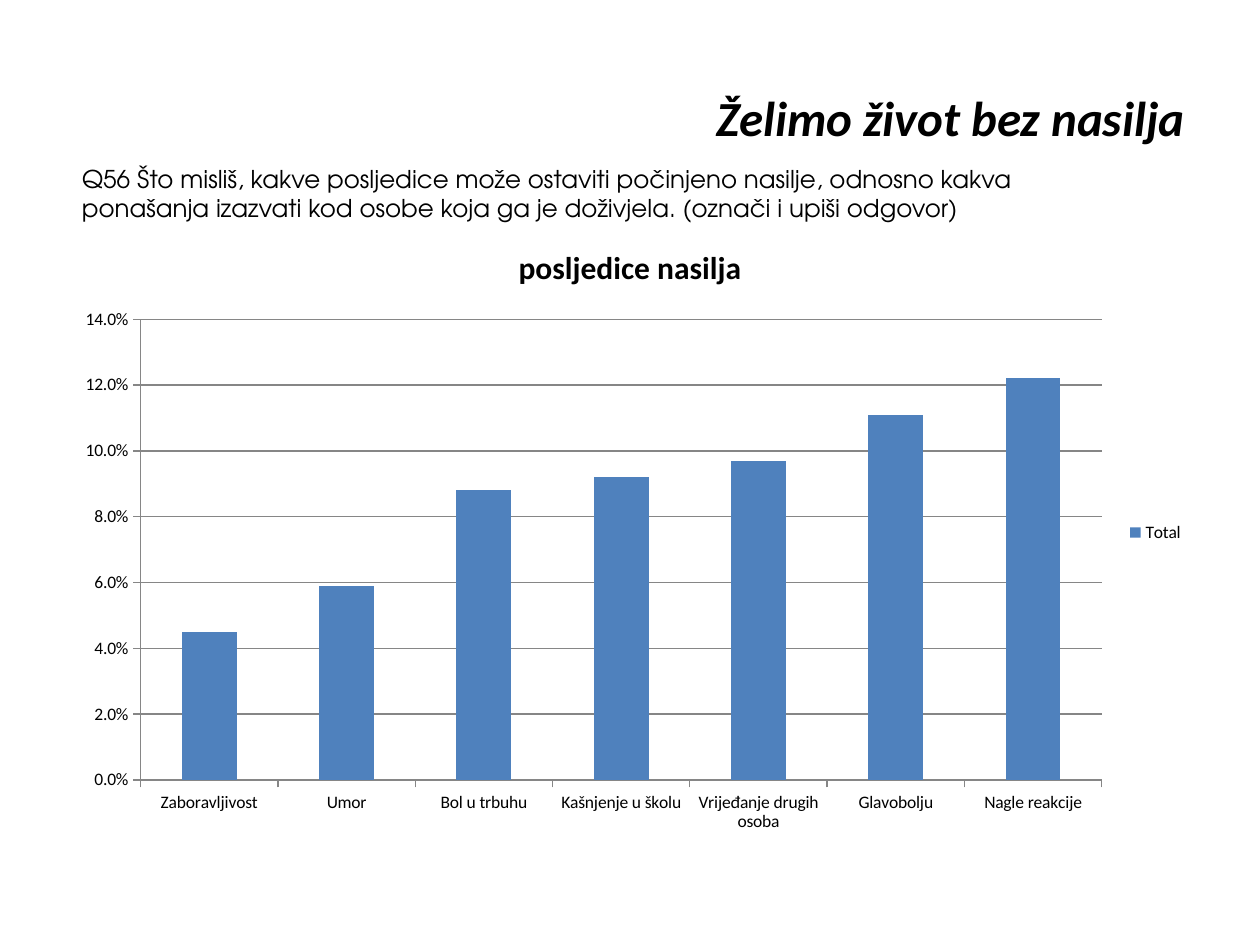
from dataclasses import dataclass

from pptx import Presentation
from pptx.chart.chart import Chart
from pptx.chart.data import CategoryChartData
from pptx.dml.color import RGBColor
from pptx.enum.chart import XL_CHART_TYPE, XL_LEGEND_POSITION, XL_TICK_MARK
from pptx.enum.text import MSO_ANCHOR, MSO_AUTO_SIZE, PP_ALIGN
from pptx.slide import Slide
from pptx.text.text import Font
from pptx.util import Cm, Pt

COLOURS = {"text": "000000", "bar": "4F81BD", "line": "868686"}
BODY_FONT = "Calibri"


@dataclass(frozen=True)
class Box:
    left: float
    top: float
    width: float
    height: float

    def lengths(self) -> tuple[Cm, Cm, Cm, Cm]:
        return Cm(self.left), Cm(self.top), Cm(self.width), Cm(self.height)


@dataclass(frozen=True)
class Caption:
    text: str
    box: Box
    font: str
    size: float
    emphasis: bool = False
    align: PP_ALIGN = PP_ALIGN.LEFT
    anchor: MSO_ANCHOR = MSO_ANCHOR.TOP
    auto_size: MSO_AUTO_SIZE = MSO_AUTO_SIZE.NONE


CAPTIONS = [
    Caption("Želimo život bez nasilja", Box(1.27, 0.76, 22.86, 3.18), BODY_FONT, 28,
            emphasis=True, align=PP_ALIGN.RIGHT, anchor=MSO_ANCHOR.MIDDLE),
    Caption("Q56 Što misliš, kakve posljedice može ostaviti počinjeno nasilje, "
            "odnosno kakva ponašanja izazvati kod osobe koja ga je doživjela. "
            "(označi i upiši odgovor)",
            Box(1.4, 3.18, 21.44, 1.45), "TeX Gyre Adventor", 14,
            auto_size=MSO_AUTO_SIZE.SHAPE_TO_FIT_TEXT),
]

CONSEQUENCES = {
    "Zaboravljivost": 0.045,
    "Umor": 0.059,
    "Bol u trbuhu": 0.088,
    "Kašnjenje u školu": 0.092,
    "Vrijeđanje drugih osoba": 0.097,
    "Glavobolju": 0.111,
    "Nagle reakcije": 0.122,
}


def colour(name: str) -> RGBColor:
    return RGBColor.from_string(COLOURS[name])


def style_font(font: Font, name: str, size: float, bold: bool = False) -> None:
    font.name = name
    font.size = Pt(size)
    font.bold = bold
    font.color.rgb = colour("text")


def draw_caption(slide: Slide, caption: Caption) -> None:
    frame = slide.shapes.add_textbox(*caption.box.lengths()).text_frame
    frame.word_wrap = True
    frame.auto_size = caption.auto_size
    frame.vertical_anchor = caption.anchor
    frame.text = caption.text
    paragraph = frame.paragraphs[0]
    paragraph.alignment = caption.align
    font = paragraph.runs[0].font
    style_font(font, caption.font, caption.size, caption.emphasis)
    font.italic = caption.emphasis


def style_axes(chart: Chart) -> None:
    for axis in (chart.category_axis, chart.value_axis):
        axis.major_tick_mark = XL_TICK_MARK.OUTSIDE
        axis.minor_tick_mark = XL_TICK_MARK.NONE
        axis.format.line.color.rgb = colour("line")
        axis.format.line.width = Pt(0.75)
    shares = chart.value_axis
    shares.minimum_scale, shares.maximum_scale, shares.major_unit = 0, 0.14, 0.02
    shares.tick_labels.number_format = "0.0%"
    shares.tick_labels.number_format_is_linked = False
    shares.has_major_gridlines = True
    shares.major_gridlines.format.line.color.rgb = colour("line")
    shares.major_gridlines.format.line.width = Pt(0.75)


def draw_consequences(slide: Slide, box: Box) -> None:
    answers = CategoryChartData(number_format="0.0%")
    answers.categories = list(CONSEQUENCES)
    answers.add_series("Total", list(CONSEQUENCES.values()))
    chart = slide.shapes.add_chart(
        XL_CHART_TYPE.COLUMN_CLUSTERED, *box.lengths(), answers).chart
    style_font(chart.font, BODY_FONT, 10)

    chart.has_title = True
    heading = chart.chart_title.text_frame
    heading.text = "posljedice nasilja"
    style_font(heading.paragraphs[0].runs[0].font, BODY_FONT, 18, bold=True)
    chart.chart_title.include_in_layout = False

    chart.has_legend = True
    chart.legend.position = XL_LEGEND_POSITION.RIGHT
    chart.legend.include_in_layout = False

    plot = chart.plots[0]
    plot.gap_width = 150
    plot.vary_by_categories = False
    total = plot.series[0]
    total.format.fill.solid()
    total.format.fill.fore_color.rgb = colour("bar")
    style_axes(chart)


def main() -> None:
    presentation = Presentation()
    presentation.slide_width = Cm(25.4)
    presentation.slide_height = Cm(19.05)
    slide = presentation.slides.add_slide(presentation.slide_layouts[6])
    draw_consequences(slide, Box(1.27, 4.45, 22.86, 12.57))
    for caption in CAPTIONS:
        draw_caption(slide, caption)
    presentation.save("out.pptx")


if __name__ == "__main__":
    main()
